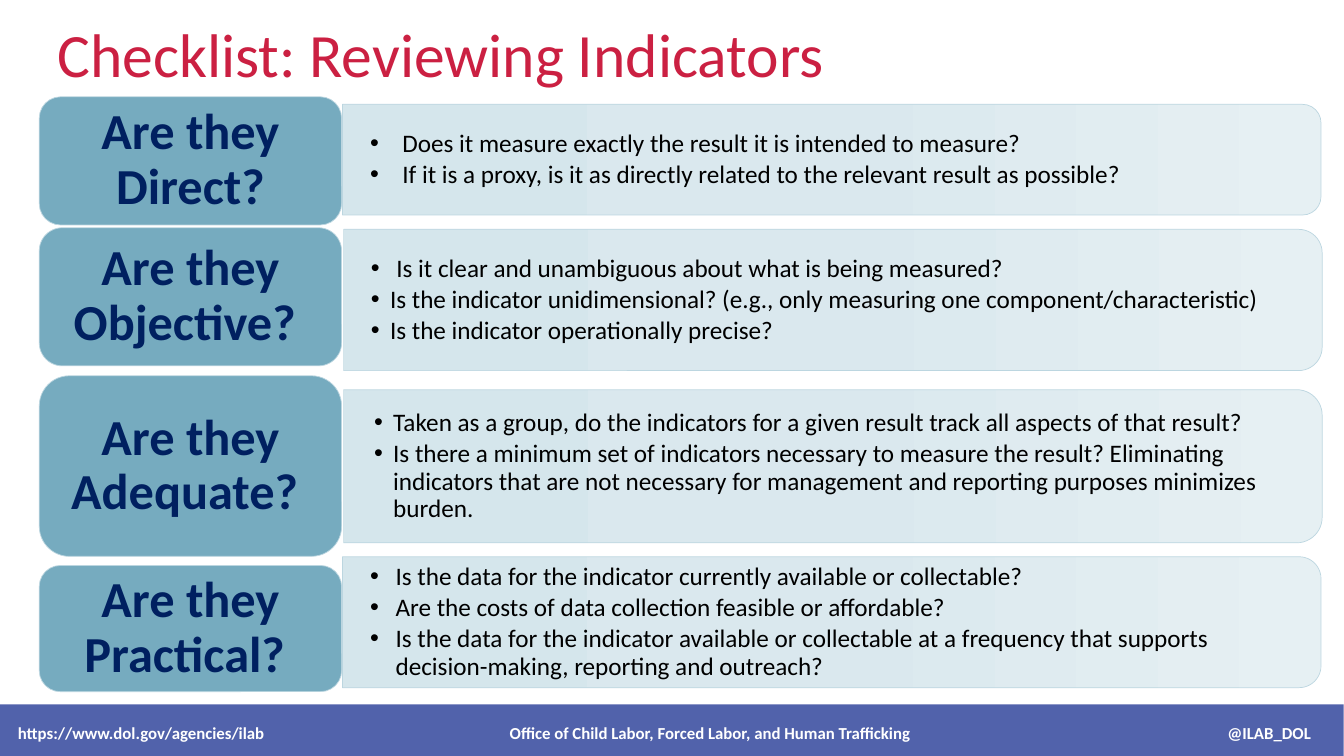
from copy import deepcopy
from dataclasses import dataclass

from lxml.etree import SubElement
from pptx import Presentation
from pptx.dml.color import RGBColor
from pptx.enum.shapes import MSO_SHAPE
from pptx.enum.text import MSO_ANCHOR, MSO_AUTO_SIZE, PP_ALIGN
from pptx.oxml.ns import qn
from pptx.util import Cm, Pt

TITLE = "Checklist: Reviewing Indicators"
CHECKS = [
    {
        "question": "Are they Direct?",
        "tab": (2.44, 3.23), "panel": (2.63, 2.79), "left": 8.63, "text_left": 8.64,
        "points": [
            (0.81, "Does it measure exactly the result it is intended to measure?"),
            (0.81, "If it is a proxy, is it as directly related to the relevant result as possible?"),
        ],
    },
    {
        "question": "Are they Objective? ",
        "tab": (5.74, 3.48), "panel": (5.78, 3.56), "left": 8.66, "text_left": 8.66,
        "points": [
            (0.64, "Is it clear and unambiguous about what is being measured?"),
            (0.48, "Is the indicator unidimensional? (e.g., only measuring one component/characteristic)"),
            (0.48, "Is the indicator operationally precise?"),
        ],
    },
    {
        "question": "Are they Adequate? ",
        "tab": (9.47, 4.55), "panel": (9.82, 3.86), "left": 8.66, "text_left": 8.74,
        "points": [
            (0.48, "Taken as a group, do the indicators for a given result track all aspects of that result?"),
            (0.48, "Is there a minimum set of indicators necessary to measure the result? Eliminating "
                   "indicators that are not necessary for management and reporting purposes minimizes burden."),
        ],
    },
    {
        "question": "Are they Practical? ",
        "tab": (14.25, 3.18), "panel": (14.03, 3.3), "left": 8.63, "text_left": 8.64,
        "points": [
            (0.64, "Is the data for the indicator currently available or collectable?"),
            (0.64, "Are the costs of data collection feasible or affordable?"),
            (0.64, "Is the data for the indicator available or collectable at a frequency that supports "
                   "decision-making, reporting and outreach?"),
        ],
    },
]
FOOTER = [
    ("https://www.dol.gov/agencies/ilab", 0.45, 8, PP_ALIGN.LEFT),
    ("Office of Child Labor, Forced Labor, and Human Trafficking", 10.9, 14, PP_ALIGN.CENTER),
    ("@ILAB_DOL", 27.04, 6, PP_ALIGN.RIGHT),
]
TAB_LEFT, TAB_WIDTH = 0.99, 7.62
PANEL_WIDTH, POINTS_WIDTH = 24.66, 24.48
BAR = (-0.1, 17.75, 33.96, 1.42)


@dataclass(frozen=True)
class Theme:
    font: str = "Calibri"
    title: RGBColor = RGBColor(0xCB, 0x20, 0x42)
    question: RGBColor = RGBColor(0x00, 0x20, 0x60)
    point: RGBColor = RGBColor(0, 0, 0)
    footer: RGBColor = RGBColor(255, 255, 255)
    bar: RGBColor = RGBColor(0x3F, 0x51, 0xA2)
    tab: RGBColor = RGBColor(0x76, 0xAB, 0xBF)
    outline: RGBColor = RGBColor(0xBC, 0xD6, 0xE0)
    panel: tuple = (
        RGBColor(0xE6, 0xF0, 0xF3), RGBColor(0xDA, 0xE8, 0xEE), RGBColor(0xD5, 0xE6, 0xEC),
    )
    title_size: int = 44
    question_size: int = 36
    point_size: int = 18
    footer_size: int = 12


THEME = Theme()


def style(para, size, color, bold=False):
    para.font.name = THEME.font
    para.font.size = Pt(size)
    para.font.color.rgb = color
    para.font.bold = bold


def set_frame(frame, side, end):
    frame.word_wrap = True
    frame.vertical_anchor = MSO_ANCHOR.MIDDLE
    frame.margin_left = frame.margin_right = Cm(side)
    frame.margin_top = frame.margin_bottom = Cm(end)


def add_box(page, left, top, width, height, side=0, end=0):
    box = page.shapes.add_textbox(Cm(left), Cm(top), Cm(width), Cm(height))
    set_frame(box.text_frame, side, end)
    return box


def add_block(page, kind, left, top, width, height):
    block = page.shapes.add_shape(kind, Cm(left), Cm(top), Cm(width), Cm(height))
    block.shadow.inherit = False
    block.line.color.rgb = THEME.outline
    block.line.width = Pt(0.5)
    return block


def add_title(page):
    title = page.shapes.title
    title.left, title.top, title.width, title.height = Cm(1.19), Cm(0), Cm(27.38), Cm(1.93)
    frame = title.text_frame
    frame.text = TITLE
    frame.auto_size = MSO_AUTO_SIZE.NONE
    frame.vertical_anchor = MSO_ANCHOR.TOP
    frame.margin_top = Cm(0.41)
    para = frame.paragraphs[0]
    para.alignment = PP_ALIGN.LEFT
    style(para, THEME.title_size, THEME.title)


def add_footer(page):
    bar = add_block(page, MSO_SHAPE.RECTANGLE, *BAR)
    bar.fill.solid()
    bar.fill.fore_color.rgb = THEME.bar
    bar.line.fill.background()
    color = bar.fill._xPr.find(qn("a:solidFill"))[0]
    SubElement(color, qn("a:alpha"), val="90000")
    for text, left, width, alignment in FOOTER:
        para = add_box(page, left, BAR[1], width, BAR[3]).text_frame.paragraphs[0]
        para.text = text
        para.alignment = alignment
        style(para, THEME.footer_size, THEME.footer, bold=True)


def add_panel(page, left, top, height):
    shift = (PANEL_WIDTH - height) / 2
    panel = add_block(page, MSO_SHAPE.ROUND_2_SAME_RECTANGLE,
                      left + shift, top - shift, height, PANEL_WIDTH)
    panel.rotation = 90
    panel.fill.gradient()
    panel.fill.gradient_angle = 270
    first = panel.fill._xPr.find(qn("a:gradFill")).find(qn("a:gsLst"))[0]
    first.addnext(deepcopy(first))
    for stop, position, color in zip(panel.fill.gradient_stops, (0, 0.5, 1), THEME.panel):
        stop.position = position
        stop.color.rgb = color


def add_points(page, left, top, height, points):
    frame = add_box(page, left, top, POINTS_WIDTH, height, 0.69, 0.36).text_frame
    for number, (indent, text) in enumerate(points):
        para = frame.add_paragraph() if number else frame.paragraphs[0]
        para.text = text
        para.line_spacing = 0.9
        para.space_after = Pt(2.8)
        properties = para._p.get_or_add_pPr()
        properties.set("marL", str(Cm(indent)))
        properties.set("indent", str(-Cm(indent)))
        SubElement(properties, qn("a:buFont"), typeface="Arial")
        SubElement(properties, qn("a:buChar"), char="•")
        style(para, THEME.point_size, THEME.point)


def add_tab(page, top, height, question):
    tab = add_block(page, MSO_SHAPE.ROUNDED_RECTANGLE, TAB_LEFT, top, TAB_WIDTH, height)
    tab.fill.solid()
    tab.fill.fore_color.rgb = THEME.tab
    set_frame(tab.text_frame, 0.38, 0.18)
    para = tab.text_frame.paragraphs[0]
    para.text = question
    para.alignment = PP_ALIGN.CENTER
    para.line_spacing = 0.9
    style(para, THEME.question_size, THEME.question, bold=True)


def main():
    deck = Presentation()
    deck.slide_width, deck.slide_height = Cm(33.87), Cm(19.05)
    page = deck.slides.add_slide(deck.slide_layouts[5])
    add_title(page)
    add_footer(page)
    for check in CHECKS:
        add_panel(page, check["left"], *check["panel"])
        add_points(page, check["text_left"], *check["panel"], check["points"])
        add_tab(page, *check["tab"], check["question"])
    deck.save("out.pptx")


if __name__ == "__main__":
    main()
